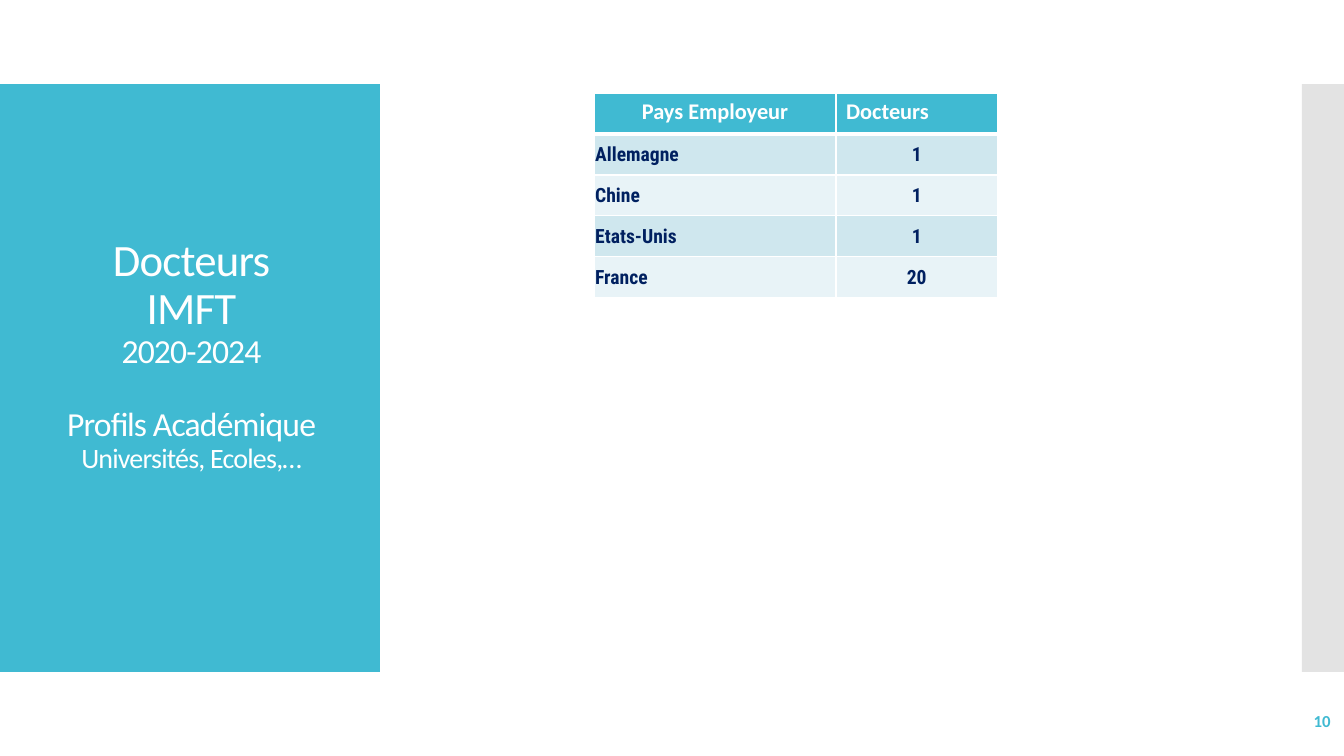
from dataclasses import dataclass
from typing import Optional

from lxml import etree
from pptx import Presentation
from pptx.dml.color import RGBColor
from pptx.enum import shapes, text
from pptx.oxml.ns import qn
from pptx.util import Pt


@dataclass(frozen=True)
class Theme:
    accent: str = "40BAD2"
    white: str = "FFFFFF"
    grey: str = "C8C8C8"
    navy: str = "002060"
    bands: tuple = ("CFE7EE", "E8F3F7")
    font: str = "Calibri"
    table_font: str = "Roboto Condensed"
    title_size: float = 32
    subtitle_size: float = 24
    detail_size: float = 20
    header_size: float = 16
    body_size: float = 14
    number_size: float = 12


THEME = Theme()
LEFT, CENTER, RIGHT = text.PP_ALIGN.LEFT, text.PP_ALIGN.CENTER, text.PP_ALIGN.RIGHT
MIDDLE = text.MSO_ANCHOR.MIDDLE


@dataclass(frozen=True)
class Panel:
    left: float
    width: float
    color: str
    opacity: Optional[int] = None


@dataclass(frozen=True)
class TitleLine:
    words: str
    size: float
    space_before: float = 0


@dataclass(frozen=True)
class CountryRow:
    country: str
    doctors: int


PANEL_TOP, PANEL_HEIGHT = 60, 420
PANELS = [
    Panel(0, 271.3, THEME.accent),
    Panel(930, 30, THEME.grey, opacity=50),
]
TITLE_LINES = [
    TitleLine("Docteurs", THEME.title_size),
    TitleLine("IMFT", THEME.title_size),
    TitleLine("2020-2024", THEME.subtitle_size),
    TitleLine("Profils Académique", THEME.subtitle_size, space_before=26.4),
    TitleLine("Universités, Ecoles,…", THEME.detail_size),
]
HEADERS = [("Pays Employeur", CENTER), ("Docteurs", LEFT)]
ROWS = [
    CountryRow("Allemagne", 1),
    CountryRow("Chine", 1),
    CountryRow("Etats-Unis", 1),
    CountryRow("France", 20),
]
COLUMN_WIDTHS = (172.8, 115.2)
ROW_HEIGHT = 29.2


def style_paragraph(p, words: str, size: float, color: str, align,
                    bold: bool = False, font: str = THEME.font) -> None:
    p.text = words
    p.alignment = align
    p.font.name = font
    p.font.size = Pt(size)
    p.font.bold = bold
    p.font.color.rgb = RGBColor.from_string(color)


def add_panel(slide, panel: Panel) -> None:
    sp = slide.shapes.add_shape(
        shapes.MSO_SHAPE.RECTANGLE,
        Pt(panel.left), Pt(PANEL_TOP), Pt(panel.width), Pt(PANEL_HEIGHT))
    sp.shadow.inherit = False
    sp.line.fill.background()
    sp.fill.solid()
    sp.fill.fore_color.rgb = RGBColor.from_string(panel.color)
    if panel.opacity is not None:
        color = sp._element.spPr.find(".//" + qn("a:srgbClr"))
        etree.SubElement(color, qn("a:alpha")).set("val", str(panel.opacity * 1000))


def fill_title(title) -> None:
    title.left, title.top, title.width, title.height = Pt(6.5), Pt(88.6), Pt(260.6), Pt(362.2)
    tf = title.text_frame
    tf.word_wrap = True
    tf.auto_size = text.MSO_AUTO_SIZE.NONE
    tf.vertical_anchor = MIDDLE
    tf.margin_bottom = Pt(34.6)
    for i, line in enumerate(TITLE_LINES):
        p = tf.add_paragraph() if i else tf.paragraphs[0]
        style_paragraph(p, line.words, line.size, THEME.white, CENTER)
        p.line_spacing = 0.9
        p.space_before = Pt(line.space_before)
        p._p.get_or_add_pPr().get_or_add_defRPr().set("spc", "-60")


def set_borders(cell, bottom: float) -> None:
    """Draw white borders, one point wide except at the bottom."""
    tc_pr = cell._tc.get_or_add_tcPr()
    widths = {"a:lnL": 1, "a:lnR": 1, "a:lnT": 1, "a:lnB": bottom}
    for i, (tag, width) in enumerate(widths.items()):
        ln = etree.Element(qn(tag), w=str(Pt(width)))
        fill = etree.SubElement(ln, qn("a:solidFill"))
        etree.SubElement(fill, qn("a:srgbClr")).set("val", THEME.white)
        tc_pr.insert(i, ln)


def format_cell(cell, fill: str, bottom_border: float = 1) -> None:
    cell.fill.solid()
    cell.fill.fore_color.rgb = RGBColor.from_string(fill)
    set_borders(cell, bottom_border)


def add_country_table(slide) -> None:
    count = len(ROWS) + 1
    table = slide.shapes.add_table(
        count, len(HEADERS), Pt(424.4), Pt(66.6),
        Pt(sum(COLUMN_WIDTHS)), Pt(ROW_HEIGHT * count)).table
    for column, width in zip(table.columns, COLUMN_WIDTHS):
        column.width = Pt(width)
    for row in table.rows:
        row.height = Pt(ROW_HEIGHT)

    for j, (label, align) in enumerate(HEADERS):
        cell = table.cell(0, j)
        style_paragraph(cell.text_frame.paragraphs[0], label, THEME.header_size,
                        THEME.white, align, bold=True)
        format_cell(cell, THEME.accent, bottom_border=3)

    for i, row in enumerate(ROWS):
        for j, (words, align) in enumerate([(row.country, LEFT), (str(row.doctors), CENTER)]):
            cell = table.cell(i + 1, j)
            cell.vertical_anchor = MIDDLE
            cell.margin_left = cell.margin_right = cell.margin_top = Pt(0.72)
            cell.margin_bottom = Pt(0)
            style_paragraph(cell.text_frame.paragraphs[0], words, THEME.body_size,
                            THEME.navy, align, bold=True, font=THEME.table_font)
            format_cell(cell, THEME.bands[i % len(THEME.bands)])


def add_slide_number(slide, number: int) -> None:
    tf = slide.shapes.add_textbox(Pt(837.4), Pt(500.4), Pt(120.2), Pt(28.8)).text_frame
    tf.word_wrap = True
    tf.vertical_anchor = MIDDLE
    style_paragraph(tf.paragraphs[0], str(number), THEME.number_size,
                    THEME.accent, RIGHT, bold=True)


def main() -> None:
    prs = Presentation()
    prs.slide_width, prs.slide_height = Pt(960), Pt(540)
    slide = prs.slides.add_slide(prs.slide_layouts.get_by_name("Title Only"))
    title = slide.shapes.title
    for panel in PANELS:
        add_panel(slide, panel)
    slide.shapes._spTree.append(title._element)  # bring the title in front of its panel
    fill_title(title)
    add_country_table(slide)
    add_slide_number(slide, 10)
    prs.save("out.pptx")


if __name__ == "__main__":
    main()
